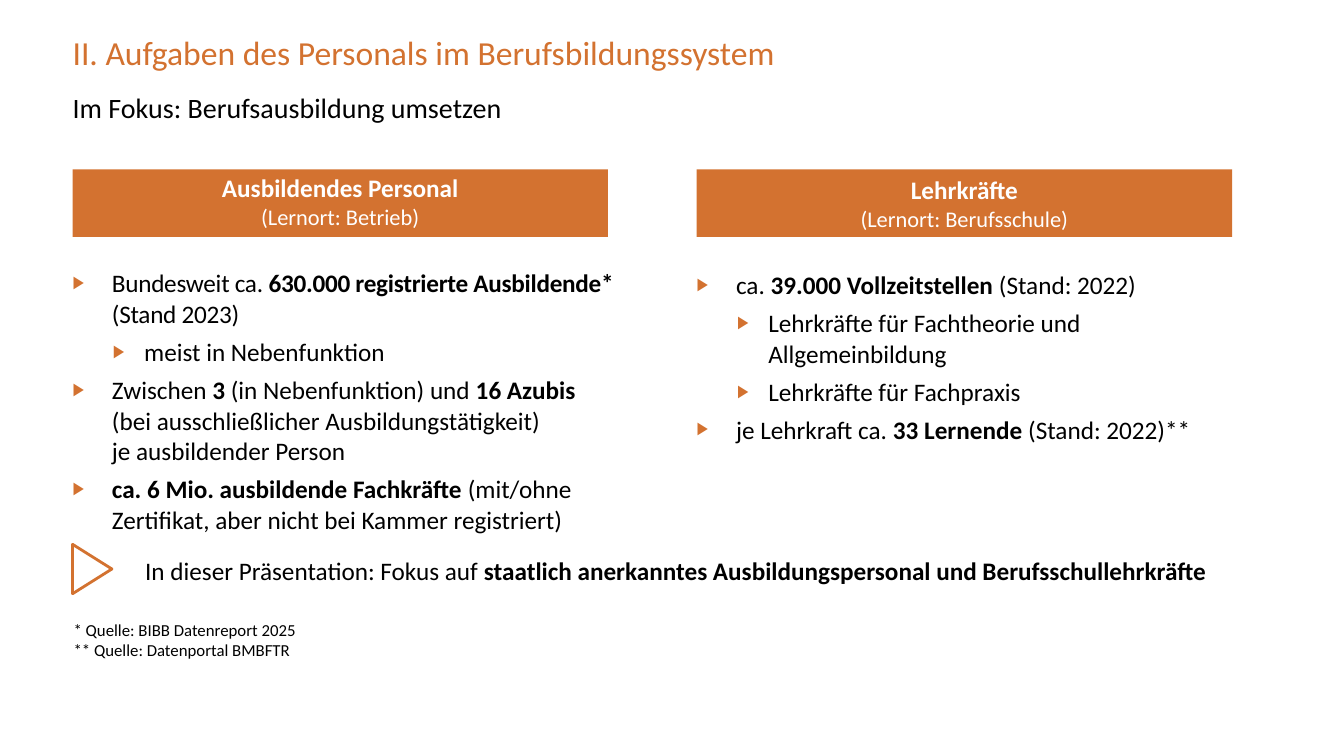
from lxml import etree
from pptx import Presentation
from pptx.dml.color import RGBColor
from pptx.enum.shapes import MSO_SHAPE as SHAPE
from pptx.enum.text import MSO_ANCHOR as ANCHOR, MSO_AUTO_SIZE as AUTO, PP_ALIGN as ALIGN
from pptx.oxml.ns import qn
from pptx.util import Inches, Pt

ORANGE = RGBColor(0xD3, 0x72, 0x30)
BLACK = RGBColor(0, 0, 0)
WHITE = RGBColor(255, 255, 255)
LEFT_X, RIGHT_X = 0.72, 6.91


def prepare(sp, x, y, w, h, anchor=ANCHOR.TOP):
    """Place a text shape, remove its margins and return its text frame."""
    sp.left, sp.top, sp.width, sp.height = map(Inches, (x, y, w, h))
    tf = sp.text_frame
    tf.word_wrap = True
    tf.auto_size = AUTO.NONE
    tf.vertical_anchor = anchor
    tf.margin_left = tf.margin_top = tf.margin_right = tf.margin_bottom = 0
    return tf


def add_text(p, runs, size, color=BLACK, align=ALIGN.LEFT, before=0):
    """Add (text, bold) runs to a paragraph; a newline becomes a line break."""
    p.alignment = align
    p.space_before = Pt(before)
    for text, bold in runs:
        for i, line in enumerate(text.split("\n")):
            if i:
                p.add_line_break()
            if line:
                r = p.add_run()
                r.text = line
                r.font.name = "Calibri"
                r.font.size = Pt(size)
                r.font.bold = bold
                r.font.color.rgb = color


prs = Presentation()
prs.slide_width, prs.slide_height = Inches(13.33), Inches(7.5)
slide = prs.slides.add_slide(prs.slide_layouts.get_by_name("Comparison"))
title, left_head, left_body, right_head, right_body = slide.placeholders

tf = prepare(title, LEFT_X, 0.32, 9.84, 0.49)
add_text(tf.paragraphs[0], [("II. Aufgaben des Personals im Berufsbildungssystem", False)], 24, ORANGE)

# Single text boxes: x, y, width, height, size, runs
texts = [
    (LEFT_X, 0.9, 12.09, 0.48, 20, [("Im Fokus: Berufsausbildung umsetzen", False)]),
    (1.44, 5.51, 10.84, 0.23, 18, [
        ("In dieser Präsentation: Fokus auf ", False),
        ("staatlich anerkanntes Ausbildungspersonal und Berufsschullehrkräfte", True)]),
    (0.73, 6.15, 3.37, 0.4, 12, [
        ("* Quelle: BIBB Datenreport 2025\n** Quelle: Datenportal BMBFTR", False)]),
]
for x, y, w, h, size, runs in texts:
    tf = prepare(slide.shapes.add_textbox(0, 0, 0, 0), x, y, w, h)
    add_text(tf.paragraphs[0], runs, size)

# Column headings
headings = [
    (left_head, LEFT_X, "Ausbildendes Personal", "(Lernort: Betrieb)", 0.9),
    (right_head, RIGHT_X, "Lehrkräfte", "(Lernort: Berufsschule)", 1.0),
]
for sp, x, heading, place, spacing in headings:
    tf = prepare(sp, x, 1.68, 5.31, 0.67, ANCHOR.MIDDLE)
    sp.fill.solid()
    sp.fill.fore_color.rgb = ORANGE
    tf.paragraphs[0].line_spacing = spacing
    add_text(tf.paragraphs[0], [(heading, True)], 18, WHITE, ALIGN.CENTER)
    add_text(tf.add_paragraph(), [(place, False)], 16, WHITE, ALIGN.CENTER)

# Bullet lists: each item is a level and its runs
left_items = [
    (0, [("Bundesweit ca. ", False), ("630.000 registrierte Ausbildende* ", True),
         ("(Stand 2023)", False)]),
    (1, [("meist in Nebenfunktion", False)]),
    (0, [("Zwischen ", False), ("3", True), (" (in Nebenfunktion) und ", False),
         ("16 Azubis\n", True),
         ("(bei ausschließlicher Ausbildungstätigkeit)\nje ausbildender Person", False)]),
    (0, [("ca. 6 Mio. ausbildende Fachkräfte", True),
         (" (mit/ohne Zertifikat, aber nicht bei Kammer registriert)", False)]),
]
right_items = [
    (0, [("ca. ", False), ("39.000 Vollzeitstellen", True), (" (Stand: 2022)", False)]),
    (1, [("Lehrkräfte für Fachtheorie und Allgemeinbildung", False)]),
    (1, [("Lehrkräfte für Fachpraxis", False)]),
    (0, [("je Lehrkraft ca. ", False), ("33 Lernende", True), (" (Stand: 2022)**", False)]),
]
INDENTS = [(0.39, -0.39), (0.71, -0.31)]
lists = [
    (left_body, LEFT_X, 2.65, 5.39, 2.74, left_items),
    (right_body, RIGHT_X, 2.67, 5.31, 1.74, right_items),
]
for sp, x, y, w, h, items in lists:
    tf = prepare(sp, x, y, w, h)
    for i, (level, runs) in enumerate(items):
        p = tf.add_paragraph() if i else tf.paragraphs[0]
        p.level = level
        p.line_spacing = Pt(22)
        p.space_before = Pt(0)
        pPr = p._p.get_or_add_pPr()
        margin, indent = INDENTS[level]
        pPr.set("marL", str(Inches(margin)))
        pPr.set("indent", str(Inches(indent)))
        color = etree.SubElement(pPr, qn("a:buClr"))
        etree.SubElement(color, qn("a:srgbClr"), val=str(ORANGE))
        etree.SubElement(pPr, qn("a:buSzPct"), val="70000")
        etree.SubElement(pPr, qn("a:buFont"), typeface="Calibri")
        etree.SubElement(pPr, qn("a:buChar"), char="▶")
        add_text(p, runs, 18, before=5 if i else 0)

# Slightly tighter letters keep the first left item on two lines
for r in left_body.text_frame.paragraphs[0].runs:
    r._r.get_or_add_rPr().set("spc", "-20")

pointer = slide.shapes.add_shape(
    SHAPE.ISOSCELES_TRIANGLE, Inches(0.67), Inches(5.45), Inches(0.49), Inches(0.39))
pointer.rotation = 90
pointer.shadow.inherit = False
pointer.fill.background()
pointer.line.color.rgb = ORANGE
pointer.line.width = Pt(2)

prs.save("out.pptx")
